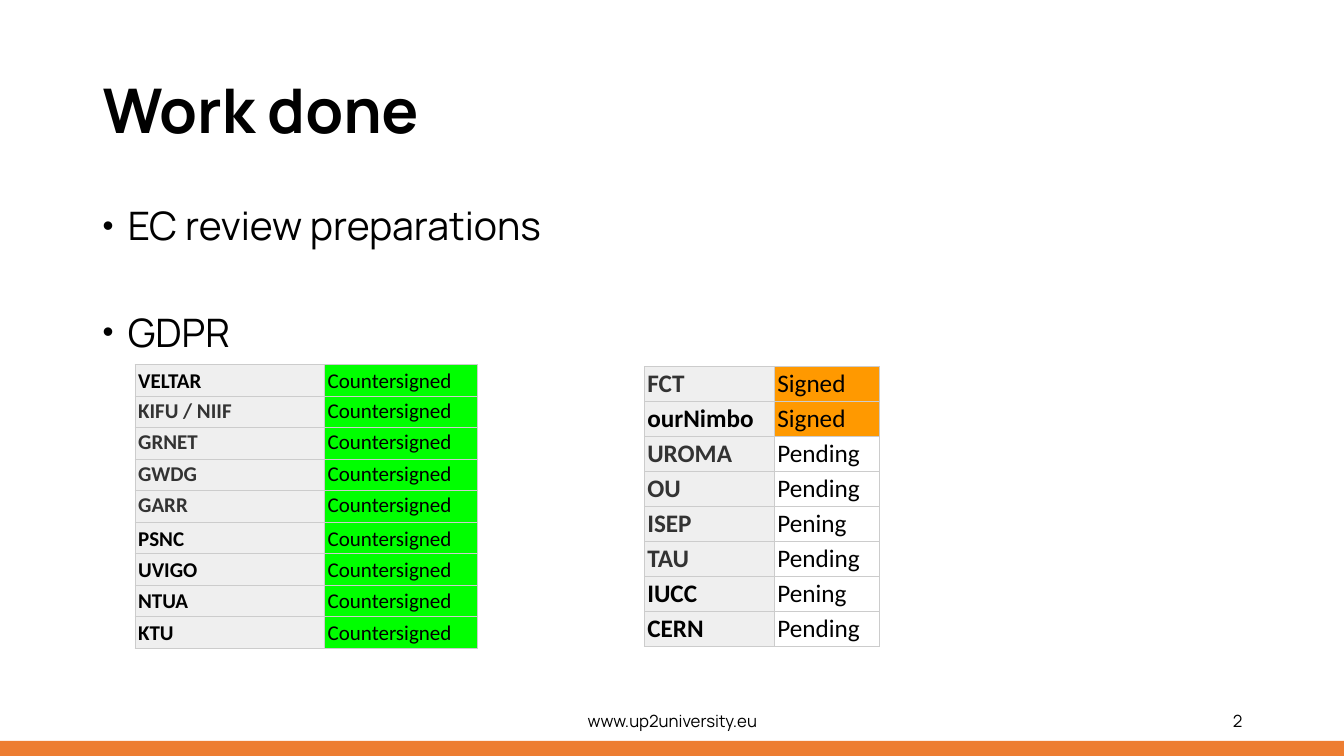
from lxml.etree import SubElement
from pptx import Presentation
from pptx.dml.color import RGBColor
from pptx.enum.shapes import MSO_SHAPE
from pptx.enum.text import MSO_ANCHOR, PP_ALIGN
from pptx.oxml.ns import qn
from pptx.util import Inches, Pt

BLACK, GREY, LIGHT = "000000", "333333", "EFEFEF"
GREEN, ORANGE, BORDER, FOOTER_BAR = "00FF00", "FF9900", "CCCCCC", "ED7D31"

# Partner, whether the name is black (otherwise grey), status
COUNTERSIGNED = [
    (name, name not in ("KIFU / NIIF", "GRNET", "GWDG", "GARR"), "Countersigned")
    for name in ("VELTAR", "KIFU / NIIF", "GRNET", "GWDG", "GARR",
                 "PSNC", "UVIGO", "NTUA", "KTU")
]
OUTSTANDING = [
    ("FCT", False, "Signed"),
    ("ourNimbo", True, "Signed"),
    ("UROMA", False, "Pending"),
    ("OU", False, "Pending"),
    ("ISEP", False, "Pening"),
    ("TAU", False, "Pending"),
    ("IUCC", True, "Pening"),
    ("CERN", True, "Pending"),
]
STATUS_FILLS = {"Countersigned": GREEN, "Signed": ORANGE}


def color(value):
    return RGBColor.from_string(value)


def add_run(paragraph, text, size, font="Manrope", fill=BLACK, bold=False):
    run = paragraph.add_run()
    run.text = text
    run.font.name = font
    run.font.size = Pt(size)
    run.font.bold = bold
    run.font.color.rgb = color(fill)


def add_text_frame(slide, box, anchor=MSO_ANCHOR.MIDDLE):
    frame = slide.shapes.add_textbox(*map(Inches, box)).text_frame
    frame.word_wrap = True
    frame.vertical_anchor = anchor
    return frame


def add_title(slide, box, text):
    paragraph = add_text_frame(slide, box).paragraphs[0]
    paragraph.line_spacing = 0.9
    add_run(paragraph, text, 44, bold=True)


def add_bullets(slide, box, items, gap):
    frame = add_text_frame(slide, box, MSO_ANCHOR.TOP)
    for index, text in enumerate(items):
        paragraph = frame.add_paragraph() if index else frame.paragraphs[0]
        paragraph.line_spacing = 0.9
        if index:
            paragraph.space_before = Pt(gap)
        properties = paragraph._p.get_or_add_pPr()
        properties.set("marL", str(Inches(0.25)))
        properties.set("indent", str(-Inches(0.25)))
        SubElement(properties, qn("a:buSzPct"), val="80000")
        SubElement(properties, qn("a:buFont"), typeface="Arial")
        SubElement(properties, qn("a:buChar"), char="•")
        add_run(paragraph, text, 28)


def style_cell(cell, fill, anchor):
    cell.margin_left = cell.margin_right = Inches(0.03)
    cell.margin_top = cell.margin_bottom = Inches(0.02)
    cell.vertical_anchor = anchor
    # Borders come before the fill in the cell properties
    properties = cell._tc.get_or_add_tcPr()
    for side in ("lnL", "lnR", "lnT", "lnB"):
        line = SubElement(properties, qn(f"a:{side}"), w=str(Pt(0.75)))
        solid = SubElement(line, qn("a:solidFill"))
        SubElement(solid, qn("a:srgbClr"), val=BORDER)
    if fill:
        cell.fill.solid()
        cell.fill.fore_color.rgb = color(fill)
    else:
        cell.fill.background()


def add_status_table(slide, box, partners, name_width, size):
    left, top, width, height = box
    table = slide.shapes.add_table(len(partners), 2, *map(Inches, box)).table
    table.first_row = table.horz_banding = False
    table.columns[0].width = Inches(name_width)
    table.columns[1].width = Inches(width - name_width)
    for index, (name, is_black, status) in enumerate(partners):
        table.rows[index].height = Inches(height / len(partners))
        anchor = MSO_ANCHOR.BOTTOM if is_black else MSO_ANCHOR.TOP
        name_cell, status_cell = table.cell(index, 0), table.cell(index, 1)
        style_cell(name_cell, LIGHT, anchor)
        style_cell(status_cell, STATUS_FILLS.get(status), anchor)
        add_run(name_cell.text_frame.paragraphs[0], name, size, "Calibri",
                BLACK if is_black else GREY, True)
        add_run(status_cell.text_frame.paragraphs[0], status, size, "Calibri")


def add_footer(slide, box, address, number):
    left, top, width, height = box
    # Bar along the bottom edge
    bar = slide.shapes.add_shape(
        MSO_SHAPE.RECTANGLE, Inches(left), Inches(top + height - 0.15),
        Inches(width), Inches(0.15))
    bar.shadow.inherit = False
    bar.fill.solid()
    bar.fill.fore_color.rgb = color(FOOTER_BAR)
    bar.line.fill.background()
    # Web address and slide number
    for offset, text_width, text, alignment in (
            (4.42, 4.5, address, PP_ALIGN.CENTER),
            (9.42, 3, number, PP_ALIGN.RIGHT)):
        frame = add_text_frame(slide, (left + offset, top, text_width, 0.4))
        paragraph = frame.paragraphs[0]
        paragraph.alignment = alignment
        add_run(paragraph, text, 12)


def main():
    presentation = Presentation()
    presentation.slide_width = Inches(13.33)
    presentation.slide_height = Inches(7.5)
    slide = presentation.slides.add_slide(presentation.slide_layouts[6])
    add_footer(slide, (0, 6.95, 13.33, 0.55), "www.up2university.eu", "2")
    add_title(slide, (0.92, 0.4, 10.08, 1.45), "Work done")
    add_bullets(slide, (0.92, 2, 11.5, 4.76),
                ["EC review preparations", "GDPR"], 46)
    add_status_table(slide, (1.34, 3.62, 3.4, 2.81), COUNTERSIGNED, 1.88, 15)
    add_status_table(slide, (6.39, 3.64, 2.33, 2.77), OUTSTANDING, 1.29, 18)
    presentation.save("out.pptx")


if __name__ == "__main__":
    main()
